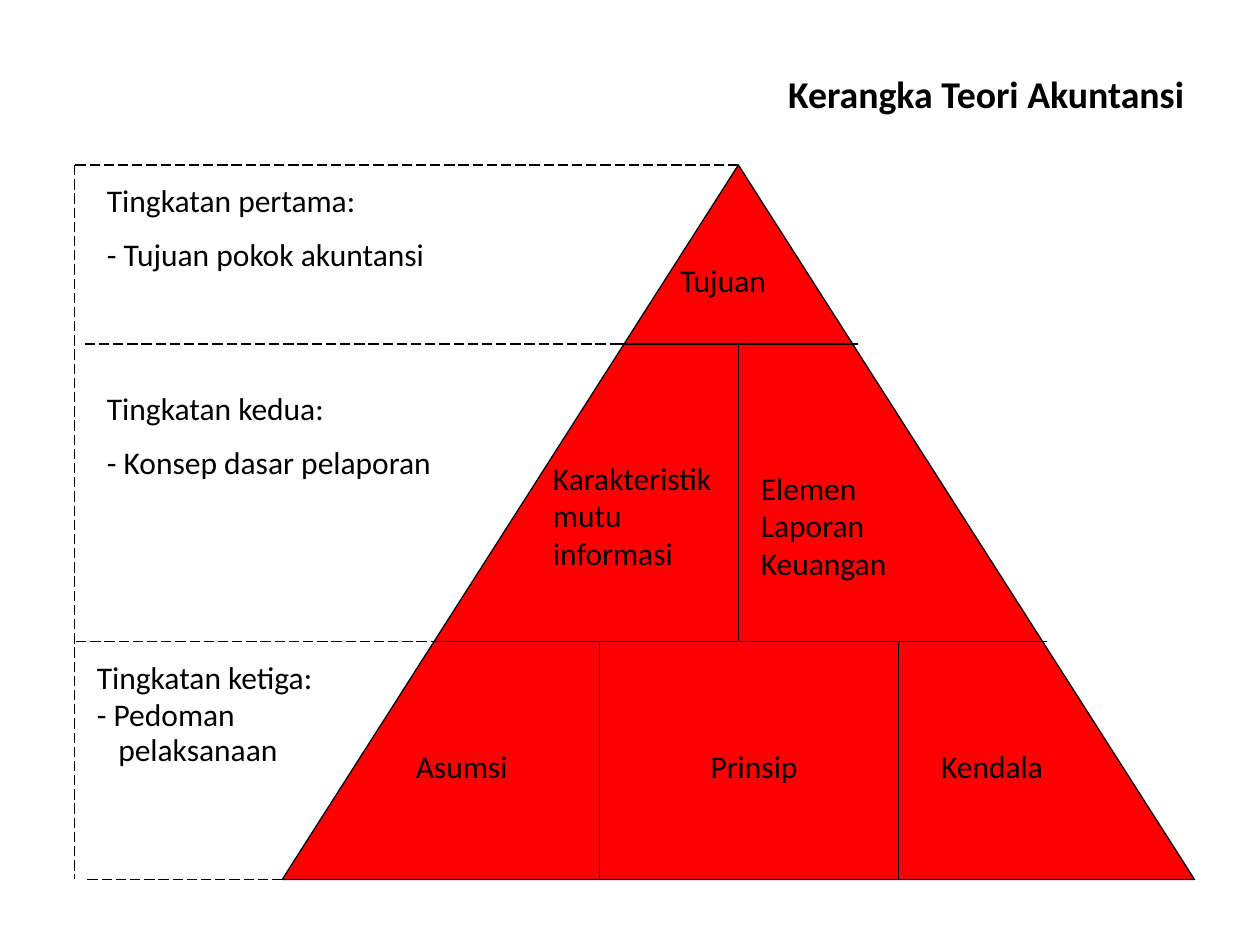
from lxml import etree
from pptx import Presentation
from pptx.dml.color import RGBColor
from pptx.enum import dml, shapes, text
from pptx.oxml.ns import qn
from pptx.util import Inches, Pt

COLORS = {"ink": "000000", "pyramid": "FF0000"}
FONT = "Calibri"
TITLE = "Kerangka Teori Akuntansi"

# Key positions in inches
LEFT, INNER_LEFT = 0.59, 0.67
BASE_LEFT, BASE_RIGHT = 2.24, 9.48
APEX_X = (BASE_LEFT + BASE_RIGHT) / 2
TOP, SECOND, THIRD, BOTTOM = 1.31, 2.73, 5.09, 6.98

SOLID_LINES = [
    (4.92, SECOND, 6.81, SECOND),
    (3.5, THIRD, 8.31, THIRD),
    (APEX_X, SECOND, APEX_X, THIRD),
    (4.76, THIRD, 4.76, BOTTOM),
    (7.13, THIRD, 7.13, BOTTOM),
]
DASHED_LINES = [
    (APEX_X, TOP, LEFT, TOP),
    (4.92, SECOND, INNER_LEFT, SECOND),
    (3.5, THIRD, LEFT, THIRD),
    (BASE_LEFT, BOTTOM, INNER_LEFT, BOTTOM),
    (LEFT, TOP, LEFT, BOTTOM),
]
# text, (left, top, width, height), left margin, alignment
PARTS = [
    ("Tujuan", (5.24, 2.02, 1.1, 0.4), 0.16, "LEFT"),
    ("Karakteristik mutu informasi", (4.29, 3.59, 1.65, 1), 0.1, "LEFT"),
    ("Elemen Laporan Keuangan", (5.94, 3.67, 1.65, 1), 0.1, "LEFT"),
    ("Asumsi", (3.03, 5.88, 1.5, 0.4), 0.27, "LEFT"),
    ("Prinsip", (5, 5.88, 1.97, 0.4), 0.1, "CENTER"),
    ("Kendala", (7.2, 5.88, 1.57, 0.4), 0.27, "LEFT"),
]
# paragraphs, (left, top, width, height)
LEVELS = [
    (["Tingkatan pertama:", "- Tujuan pokok akuntansi"], (0.75, 1.39, 3.62, 0.85)),
    (["Tingkatan kedua:", "- Konsep dasar pelaporan"], (0.75, 3.04, 3.39, 0.85)),
    (["Tingkatan ketiga:", "- Pedoman", "pelaksanaan"], (0.67, 5.17, 3.31, 1.01)),
]


def rgb(name):
    return RGBColor.from_string(COLORS[name])


def style_line(line):
    line.color.rgb = rgb("ink")
    line.width = Pt(0.75)


def style_font(font, size, bold=False):
    font.name, font.size, font.bold = FONT, Pt(size), bold
    font.color.rgb = rgb("ink")


def add_line(s, ends, dashed=False):
    c = s.shapes.add_connector(shapes.MSO_CONNECTOR.STRAIGHT, *map(Inches, ends))
    style_line(c.line)
    if dashed:
        c.line.dash_style = dml.MSO_LINE.LONG_DASH
    etree.SubElement(c._element.spPr, qn("a:effectLst"))


def add_text(s, paragraphs, box, margin=0.1, align="LEFT"):
    tf = s.shapes.add_textbox(*map(Inches, box)).text_frame
    tf.word_wrap = True
    tf.auto_size = text.MSO_AUTO_SIZE.SHAPE_TO_FIT_TEXT
    tf.margin_left = Inches(margin)
    tf.text = "\n".join(paragraphs)
    for p in tf.paragraphs:
        p.alignment = text.PP_ALIGN[align]
        p.space_before = Pt(9)
        style_font(p.runs[0].font, 18)
    return tf


def add_title(s):
    title = s.shapes.title
    title.left, title.top, title.width, title.height = map(Inches, (0.5, 0.5, 9, 0.49))
    tf = title.text_frame
    tf.text = TITLE
    tf.vertical_anchor = text.MSO_ANCHOR.MIDDLE
    p = tf.paragraphs[0]
    p.alignment = text.PP_ALIGN.RIGHT
    style_font(p.runs[0].font, 21.6, bold=True)


def add_pyramid(s):
    box = (BASE_LEFT, TOP, BASE_RIGHT - BASE_LEFT, BOTTOM - TOP)
    sp = s.shapes.add_shape(shapes.MSO_SHAPE.FLOWCHART_EXTRACT, *map(Inches, box))
    sp.shadow.inherit = False
    sp.fill.solid()
    sp.fill.fore_color.rgb = rgb("pyramid")
    style_line(sp.line)


def main():
    prs = Presentation()
    prs.slide_width, prs.slide_height = Inches(10), Inches(7.5)
    s = prs.slides.add_slide(prs.slide_layouts[5])
    add_title(s)
    add_pyramid(s)
    for ends in SOLID_LINES:
        add_line(s, ends)
    for ends in DASHED_LINES:
        add_line(s, ends, dashed=True)
    for label, box, margin, align in PARTS:
        add_text(s, [label], box, margin, align)
    for paragraphs, box in LEVELS:
        tf = add_text(s, paragraphs, box)

    # The last level has tight lines, and its bullet text continues indented
    for p in tf.paragraphs[1:]:
        p.line_spacing = 0.5
    tf.paragraphs[-1]._p.get_or_add_pPr().set("marL", str(Inches(0.17)))
    prs.save("out.pptx")


if __name__ == "__main__":
    main()
